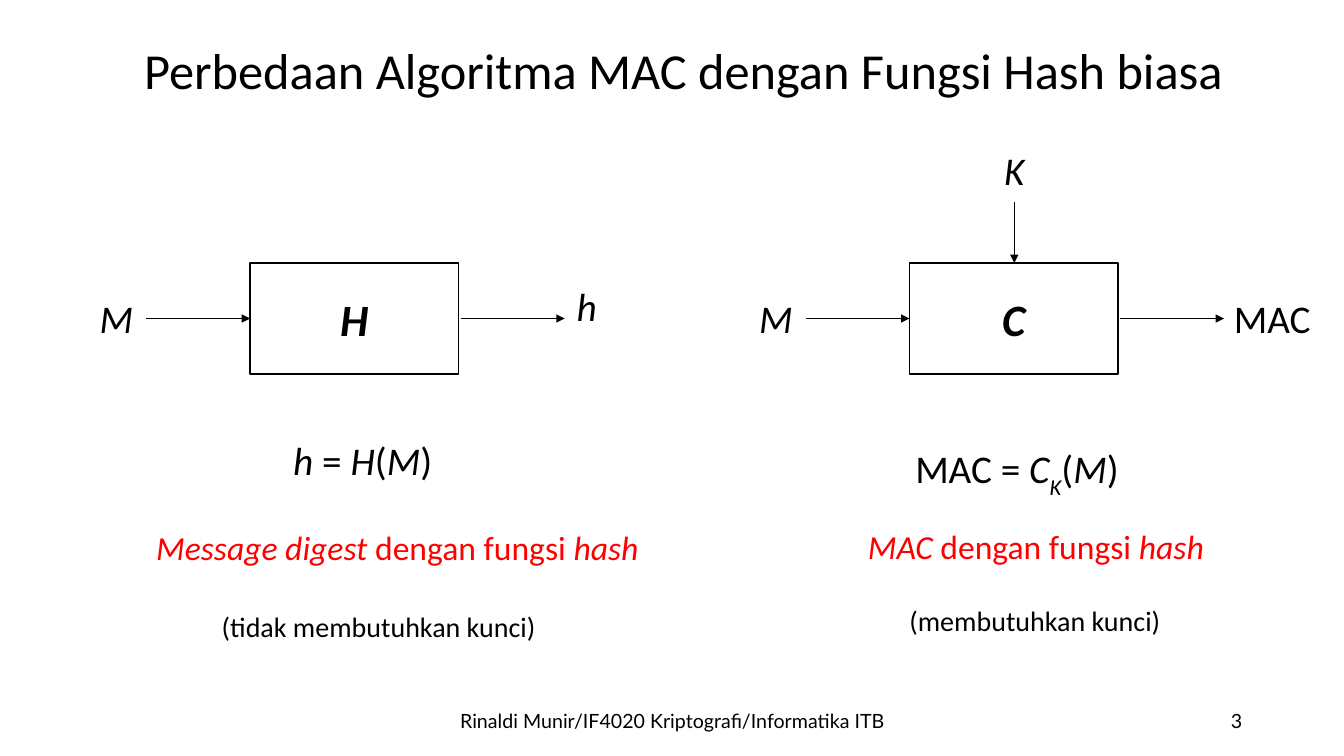
import pptx
import pptx.util
import pptx.dml.color
import pptx.enum.shapes
import pptx.enum.text
import pptx.oxml
import pptx.oxml.ns
from lxml import etree

PX = 9144
ALIGN = pptx.enum.text.PP_ALIGN
ANCHOR = pptx.enum.text.MSO_ANCHOR
THEME = {
    "ink": pptx.dml.color.RGBColor(0, 0, 0),
    "accent": pptx.dml.color.RGBColor(255, 0, 0),
    "body": "Calibri", "footer": "Lato",
    "title": 36, "block": 32, "symbol": 28, "caption": 24, "note": 20, "small": 14,
    "line": 1,
}

prs = pptx.Presentation()
prs.slide_width, prs.slide_height = 1333 * PX, 750 * PX
slide = prs.slides.add_slide(prs.slide_layouts[6])


def write(s, runs, size, color="ink", font="body", align=ALIGN.LEFT, anchor=ANCHOR.TOP, wrap=False):
    tf = s.text_frame
    tf.word_wrap = wrap
    tf.vertical_anchor = anchor
    if not wrap:
        tf.auto_size = pptx.enum.text.MSO_AUTO_SIZE.SHAPE_TO_FIT_TEXT
    p = tf.paragraphs[0]
    p.alignment = align
    for text, style in runs:
        r = p.add_run()
        r.text = text
        r.font.name = THEME[font]
        r.font.size = pptx.util.Pt(THEME[size])
        r.font.color.rgb = THEME[color]
        r.font.bold = "b" in style
        r.font.italic = "i" in style
        if "s" in style:
            r.font._element.set("baseline", "-30000")


def arrow(x1, y1, x2, y2):
    s = slide.shapes.add_connector(
        pptx.enum.shapes.MSO_CONNECTOR.STRAIGHT, x1 * PX, y1 * PX, x2 * PX, y2 * PX)
    s.line.color.rgb = THEME["ink"]
    s.line.width = pptx.util.Pt(THEME["line"])
    head = etree.SubElement(s.line._get_or_add_ln(), pptx.oxml.ns.qn("a:tailEnd"))
    head.set("type", "triangle")
    etree.SubElement(s._element.spPr, pptx.oxml.ns.qn("a:effectLst"))


for x, w, text, align in [
    (442, 450, "Rinaldi Munir/IF4020 Kriptografi/Informatika ITB", ALIGN.CENTER),
    (942, 300, "3", ALIGN.RIGHT),
]:
    s = slide.shapes.add_textbox(x * PX, 695 * PX, w * PX, 40 * PX)
    write(s, [(text, "")], "small", font="footer", align=align, anchor=ANCHOR.MIDDLE, wrap=True)

for x, name in [(248, "H"), (902, "C")]:
    s = slide.shapes.add_shape(
        pptx.enum.shapes.MSO_SHAPE.RECTANGLE, x * PX, 261 * PX, 207 * PX, 110 * PX)
    s.shadow.inherit = False
    s.fill.background()
    s.line.color.rgb = THEME["ink"]
    s.line.width = pptx.util.Pt(THEME["line"])
    write(s, [(name, "bi")], "block", align=ALIGN.CENTER, anchor=ANCHOR.MIDDLE, wrap=True)
    arrow(x - 103, 316, x, 316)
    arrow(x + 209, 316, x + 312, 316)
arrow(1006, 200, 1006, 261)

hash_caption = [("dengan fungsi ", ""), ("hash", "i")]
labels = [
    (133, 34, 1101, 71, "title", "ink", [("Perbedaan Algoritma MAC dengan Fungsi Hash biasa", "")]),
    (89, 287, 54, 57, "symbol", "ink", [("M", "i")]),
    (562, 275, 41, 57, "symbol", "ink", [("h", "i")]),
    (743, 287, 54, 57, "symbol", "ink", [("M", "i")]),
    (1214, 287, 97, 57, "symbol", "ink", [("MAC", "")]),
    (986, 140, 40, 57, "symbol", "ink", [("K", "i")]),
    (281, 428, 160, 57, "symbol", "ink",
     [("h ", "i"), ("= ", ""), ("H", "i"), ("(", ""), ("M", "i"), (")", "")]),
    (898, 436, 226, 57, "symbol", "ink",
     [("MAC = ", ""), ("C", "i"), ("K", "is"), ("(", ""), ("M", "i"), (")", "")]),
    (145, 518, 501, 50, "caption", "accent", [("Message digest ", "i")] + hash_caption),
    (851, 517, 357, 50, "caption", "accent", [("MAC ", "i")] + hash_caption),
    (210, 600, 335, 44, "note", "ink", [("(tidak membutuhkan kunci)", "")]),
    (892, 594, 278, 44, "note", "ink", [("(membutuhkan kunci)", "")]),
]
for x, y, w, h, size, color, runs in labels:
    s = slide.shapes.add_textbox(x * PX, y * PX, w * PX, h * PX)
    write(s, runs, size, color)

prs.save("out.pptx")
